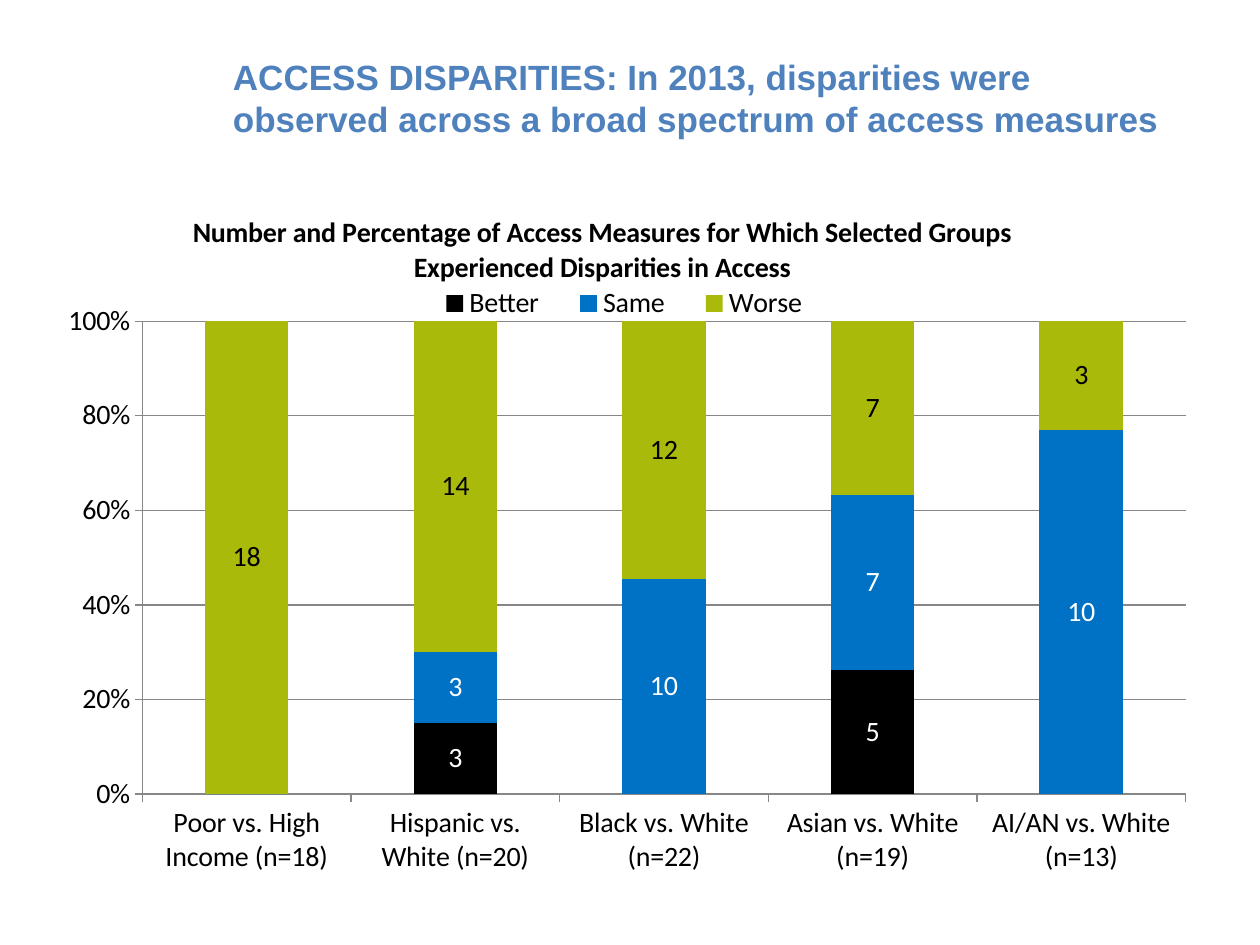
from lxml import etree
from pptx import Presentation
from pptx.chart.data import CategoryChartData
from pptx.dml.color import RGBColor
from pptx.enum.chart import (XL_CHART_TYPE as Chart, XL_LABEL_POSITION as LabelPos,
                             XL_LEGEND_POSITION as LegendPos, XL_TICK_MARK as Tick)
from pptx.enum.text import MSO_ANCHOR
from pptx.oxml import parse_xml
from pptx.oxml.ns import nsdecls, qn
from pptx.util import Inches, Pt

# Content
TITLE = ("ACCESS DISPARITIES: In 2013, disparities were observed across "
         "a broad spectrum of access measures")
CHART_TITLE = ("Number and Percentage of Access Measures for Which Selected Groups "
               "Experienced Disparities in Access")
GROUPS = ["Poor vs. High Income (n=18)", "Hispanic vs. White (n=20)",
          "Black vs. White (n=22)", "Asian vs. White (n=19)", "AI/AN vs. White (n=13)"]
SERIES = [  # name, values, fill, label colour
    ("Better", (None, 3, None, 5, None), "black", "white"),
    ("Same", (0, 3, 10, 7, 10), "blue", "white"),
    ("Worse", (18, 14, 12, 7, 3), "green", "black"),
]
COLORS = {"title": "4F81BD", "black": "000000", "white": "FFFFFF",
          "blue": "0072C6", "green": "AABA0A", "grid": "878787"}

# Shares of the slide (left, top, width, height) and of the chart
W, H = 10, 7.5
TITLE_BOX = (0.175, 0.04, 0.775, 0.127)
CHART_BOX = (0.05, 0.213, 0.9, 0.747)
PLOT = {"x": 0.07, "y": 0.17, "w": 0.92, "h": 0.67}
TITLE_AT = {"x": 0.11, "y": 0.01}
LEGEND_AT = {"x": 0.31, "y": 0.12, "w": 0.37, "h": 0.05}


def rgb(name):
    return RGBColor.from_string(COLORS[name])


def place(box):
    return [Inches(share * size) for share, size in zip(box, (W, H, W, H))]


def style(font, size=16, color="black", name="Calibri", bold=False):
    font.size, font.name, font.bold = Pt(size), name, bold
    font.color.rgb = rgb(color)


def layout(at, inner=False):
    node = parse_xml(f"<c:layout {nsdecls('c')}><c:manualLayout/></c:layout>")
    values = {"layoutTarget": "inner"} if inner else {}
    values |= {"xMode": "edge", "yMode": "edge"} | at
    for tag, value in values.items():
        etree.SubElement(node[0], qn(f"c:{tag}")).set("val", str(value))
    return node


def set_layout(parent, node, after=None):
    for old in parent.findall(qn("c:layout")):
        parent.remove(old)
    if after is None:
        parent.insert(0, node)
    else:
        parent.find(qn(after)).addnext(node)


prs = Presentation()
prs.slide_width, prs.slide_height = Inches(W), Inches(H)
s = prs.slides.add_slide(prs.slide_layouts[6])

# Slide title
tf = s.shapes.add_textbox(*place(TITLE_BOX)).text_frame
tf.word_wrap = True
tf.vertical_anchor = MSO_ANCHOR.MIDDLE
p = tf.paragraphs[0]
p.text = TITLE
style(p.font, 20, "title", "Arial", True)

# Chart
data = CategoryChartData()
data.categories = GROUPS
for name, values, *_ in SERIES:
    data.add_series(name, values)
chart = s.shapes.add_chart(Chart.COLUMN_STACKED_100, *place(CHART_BOX), data).chart
style(chart.font)
plot = chart.plots[0]
plot.gap_width, plot.overlap = 150, 100
plot.vary_by_categories = False
set_layout(chart._chartSpace.chart.plotArea, layout(PLOT, inner=True))

# Chart title and legend
chart.has_title = True
title = chart.chart_title
title.text_frame.text = CHART_TITLE
style(title.text_frame.paragraphs[0].font, bold=True)
set_layout(title._element, layout(TITLE_AT), "c:tx")
chart.has_legend = True
legend = chart.legend
legend.position = LegendPos.TOP
legend.include_in_layout = False
style(legend.font)
set_layout(legend._element, layout(LEGEND_AT), "c:legendPos")

# Axes
value_axis = chart.value_axis
value_axis.minimum_scale, value_axis.maximum_scale, value_axis.major_unit = 0, 1, 0.2
value_axis.tick_labels.number_format = "0%"
value_axis.tick_labels.number_format_is_linked = False
value_axis.has_major_gridlines = True
for axis in (chart.category_axis, value_axis):
    axis.major_tick_mark = Tick.OUTSIDE
    style(axis.tick_labels.font)
for line in (chart.category_axis.format.line, value_axis.format.line,
             value_axis.major_gridlines.format.line):
    line.color.rgb, line.width = rgb("grid"), Pt(0.75)

# Series; the number format hides zeros
for series, (_, _, fill, label) in zip(plot.series, SERIES):
    series.format.fill.solid()
    series.format.fill.fore_color.rgb = rgb(fill)
    labels = series.data_labels
    labels.show_value = True
    labels.position = LabelPos.CENTER
    labels.number_format, labels.number_format_is_linked = "0;;;", False
    style(labels.font, color=label)

prs.save("out.pptx")
